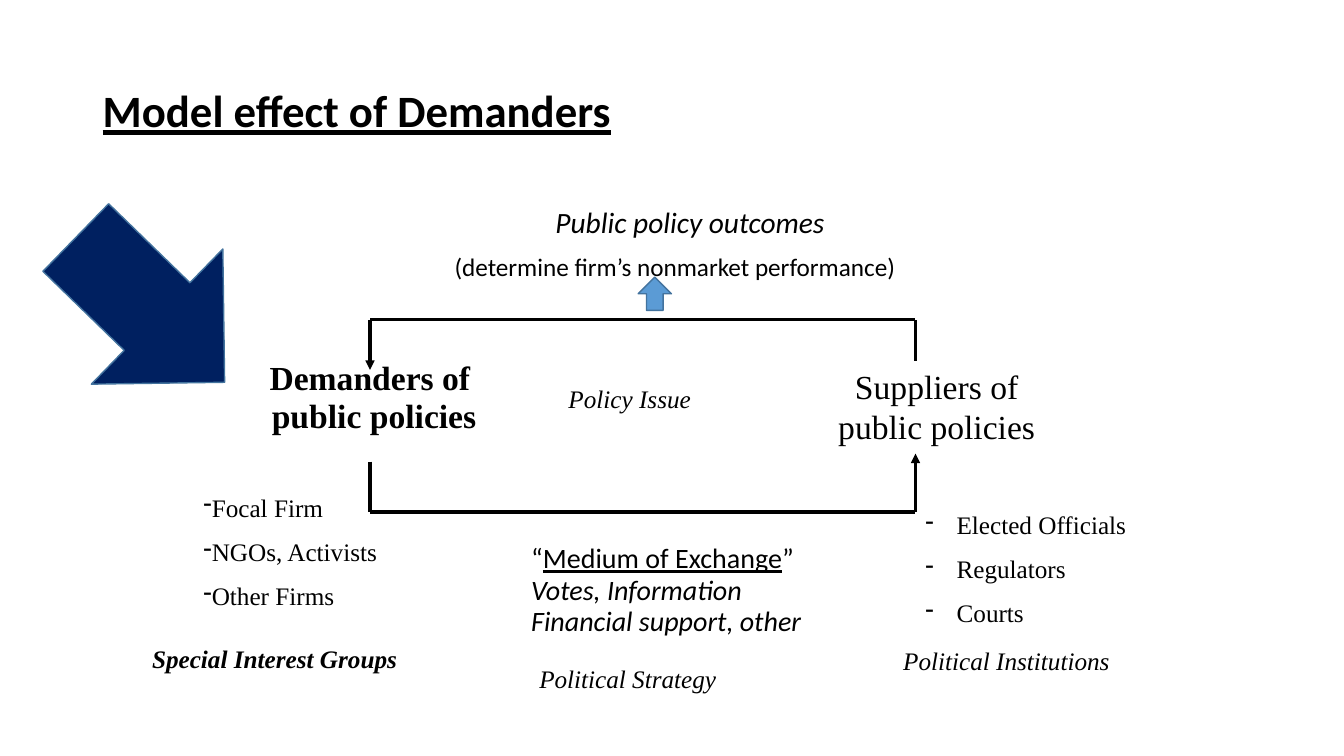
from dataclasses import dataclass
from itertools import pairwise

from lxml.etree import SubElement
from pptx import Presentation
from pptx.dml.color import RGBColor
from pptx.enum.shapes import MSO_CONNECTOR as Connector, MSO_SHAPE as Preset
from pptx.enum.text import MSO_ANCHOR as Anchor, MSO_AUTO_SIZE as AutoSize, PP_ALIGN as Align
from pptx.oxml.ns import qn
from pptx.slide import Slide
from pptx.util import Emu, Pt

EMU_PER_PX = 9144  # 100 px to the inch
BLACK, NAVY, BLUE, OUTLINE = "000000", "002060", "5B9BD5", "43739E"
SANS, SERIF = "Calibri", "Times New Roman"


def px(length: int) -> Emu:
    return Emu(length * EMU_PER_PX)


def colour(value: str) -> RGBColor:
    return RGBColor.from_string(value)


@dataclass
class Run:
    text: str
    size: int = 18
    font: str = SERIF
    bold: bool = False
    italic: bool = False
    underline: bool = False


@dataclass
class Line:
    runs: list[Run]
    margin: int = 0
    hanging: int = 0


@dataclass
class Label:
    box: tuple[int, int, int, int]
    lines: list[Line]
    spacing: float = 1.0
    before: float = 10
    align: Align = Align.LEFT
    anchor: Anchor = Anchor.TOP
    bullet: str = ""
    grow: bool = True


@dataclass
class Arrow:
    preset: Preset
    box: tuple[int, int, int, int]
    fill: str
    rotation: float = 0


def caption(box: tuple[int, int, int, int], text: str, bold: bool = False) -> Label:
    return Label(box, [Line([Run(text, bold=bold, italic=True)])])


def bullets(box: tuple[int, int, int, int], items: list[str], indent: int = 0) -> Label:
    return Label(box, [Line([Run(item)], indent, indent) for item in items], bullet="-")


LABELS = [
    # Title and outcome
    Label((92, 40, 1150, 145),
          [Line([Run("Model effect of Demanders", 32, SANS, bold=True, underline=True)])],
          spacing=0.9, before=0, anchor=Anchor.MIDDLE, grow=False),
    Label((316, 202, 742, 100), [
        Line([Run("Public policy outcomes", 21, SANS, italic=True)], margin=225),
        Line([Run("(determine firm’s nonmarket performance)", 18, SANS)], margin=125),
    ], spacing=0.9, grow=False),
    # Two sides of the market
    Label((242, 367, 258, 74), [
        Line([Run(text, 24, bold=True)]) for text in ("Demanders of ", "public policies")
    ], spacing=0.5, before=12.5, align=Align.CENTER),
    Label((808, 358, 242, 91), [Line([Run("Suppliers of public policies", 24)])],
          before=12, align=Align.CENTER),
    # Exchange between them
    Label((517, 550, 317, 93), [
        Line([Run("“", 20, SANS), Run("Medium of Exchange", 20, SANS, underline=True),
              Run("”", 20, SANS)]),
        Line([Run("Votes, Information", 20, SANS, italic=True)]),
        Line([Run("Financial support, other", 20, SANS, italic=True)]),
    ], spacing=0.35, before=14),
    # Members of each side
    bullets((192, 483, 197, 131), ["Focal Firm", "NGOs, Activists", "Other Firms"]),
    bullets((908, 500, 233, 131), ["Elected Officials", "Regulators", "Courts"], indent=31),
    # Captions
    caption((141, 633, 284, 40), "Special Interest Groups", bold=True),
    caption((554, 375, 154, 40), "Policy Issue"),
    caption((886, 635, 298, 40), "Political Institutions"),
    caption((525, 653, 298, 40), "Political Strategy"),
]

# Each flow runs along its points and ends in an arrowhead
DEMAND_X, SUPPLY_X = 367, 908
FLOWS = [
    [(SUPPLY_X, 358), (SUPPLY_X, 317), (DEMAND_X, 317), (DEMAND_X, 367)],
    [(DEMAND_X, 458), (DEMAND_X, 508), (SUPPLY_X, 508), (SUPPLY_X, 450)],
]

ARROWS = [
    Arrow(Preset.UP_ARROW, (633, 275, 33, 33), BLUE),
    Arrow(Preset.RIGHT_ARROW, (46, 214, 206, 187), NAVY, rotation=44.2),
]


def draw_label(slide: Slide, label: Label) -> None:
    frame = slide.shapes.add_textbox(*map(px, label.box)).text_frame
    frame.word_wrap = True
    frame.vertical_anchor = label.anchor
    frame.auto_size = AutoSize.SHAPE_TO_FIT_TEXT if label.grow else AutoSize.NONE
    for index, line in enumerate(label.lines):
        paragraph = frame.add_paragraph() if index else frame.paragraphs[0]
        paragraph.alignment = label.align
        paragraph.line_spacing = label.spacing
        paragraph.space_before = Pt(label.before)
        properties = paragraph._p.get_or_add_pPr()
        properties.set("marL", str(px(line.margin)))
        properties.set("indent", str(px(-line.hanging)))
        if label.bullet:
            SubElement(properties, qn("a:buChar")).set("char", label.bullet)
        for part in line.runs:
            run = paragraph.add_run()
            run.text = part.text
            font = run.font
            font.size, font.name = Pt(part.size), part.font
            font.bold, font.italic, font.underline = part.bold, part.italic, part.underline
            font.color.rgb = colour(BLACK)


def draw_flow(slide: Slide, points: list[tuple[int, int]]) -> None:
    for start, end in pairwise(points):
        connector = slide.shapes.add_connector(Connector.STRAIGHT, *map(px, start + end))
        connector.line.color.rgb = colour(BLACK)
        connector.line.width = Pt(2.25)
        if end == points[-1]:
            SubElement(connector.line._get_or_add_ln(), qn("a:tailEnd")).set("type", "triangle")
        SubElement(connector._element.spPr, qn("a:effectLst"))


def draw_arrow(slide: Slide, arrow: Arrow) -> None:
    shape = slide.shapes.add_shape(arrow.preset, *map(px, arrow.box))
    shape.rotation = arrow.rotation
    shape.shadow.inherit = False
    shape.fill.solid()
    shape.fill.fore_color.rgb = colour(arrow.fill)
    shape.line.color.rgb = colour(OUTLINE)
    shape.line.width = Pt(1)


def main() -> None:
    presentation = Presentation()
    presentation.slide_width, presentation.slide_height = px(1333), px(750)
    slide = presentation.slides.add_slide(presentation.slide_layouts[6])
    for label in LABELS:
        draw_label(slide, label)
    for flow in FLOWS:
        draw_flow(slide, flow)
    for arrow in ARROWS:
        draw_arrow(slide, arrow)
    presentation.save("out.pptx")


if __name__ == "__main__":
    main()
